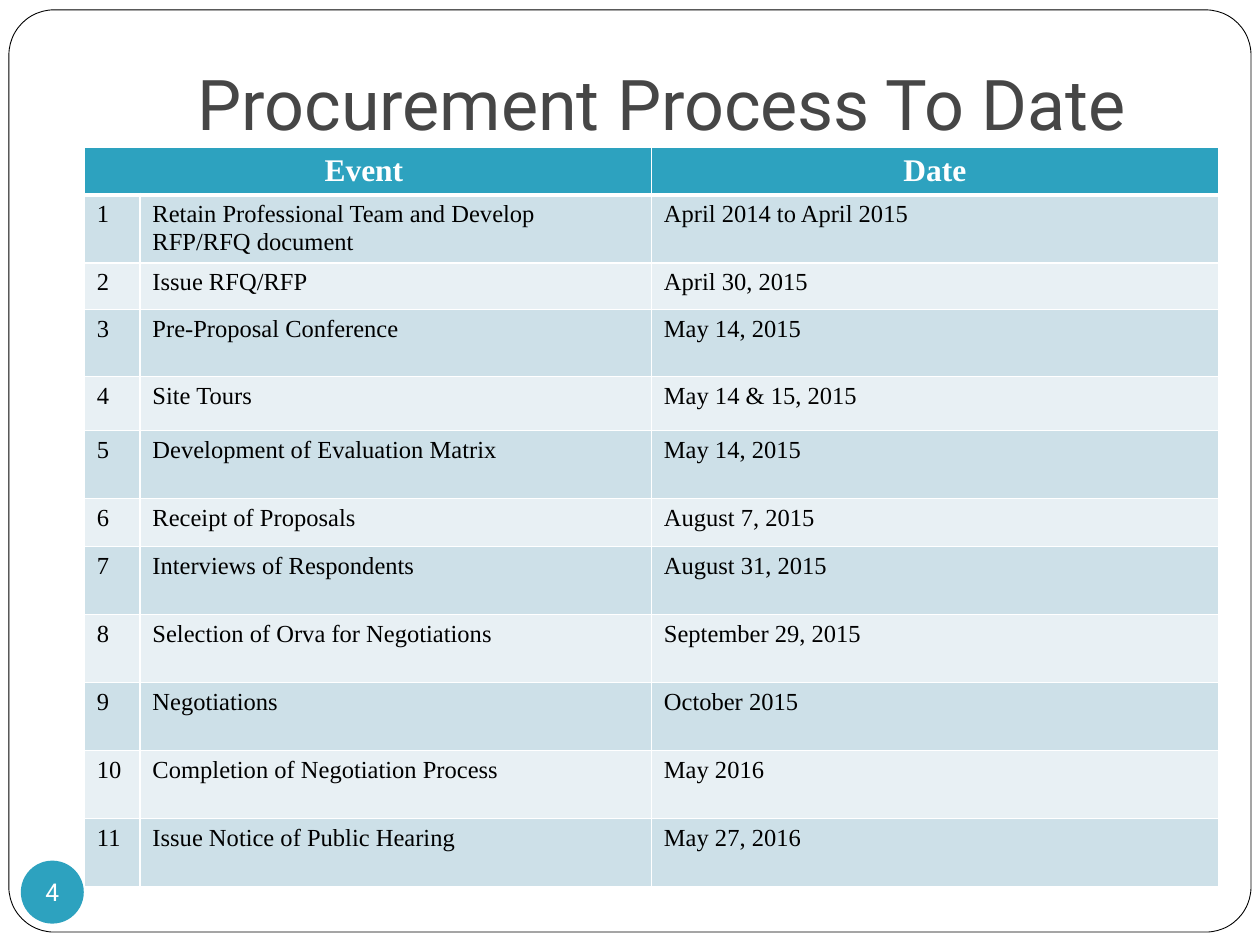
from lxml import etree
from pptx import Presentation
from pptx import util as u
from pptx.dml.color import RGBColor
from pptx.enum import shapes, text
from pptx.oxml import ns

TEAL, WHITE, BLACK, GREY = "2DA2BF", "FFFFFF", "000000", "464646"
BANDS = ["CDE0E8", "E8F0F4"]
SANS, SERIF = "Roboto", "Times New Roman"
WIDTHS = [1.12, 10.31, 11.43]
TALL = 1.37
HEIGHTS = [0.95, TALL, 0.94, 1.35, 1.09, TALL, 0.97] + [TALL] * 5
EVENTS = [
    ("Retain Professional Team and Develop RFP/RFQ document", "April 2014 to April 2015"),
    ("Issue RFQ/RFP", "April 30, 2015"),
    ("Pre-Proposal Conference", "May 14, 2015"),
    ("Site Tours", "May 14 & 15, 2015"),
    ("Development of Evaluation Matrix", "May 14, 2015"),
    ("Receipt of Proposals", "August 7, 2015"),
    ("Interviews of Respondents", "August 31, 2015"),
    ("Selection of Orva for Negotiations", "September 29, 2015"),
    ("Negotiations", "October 2015"),
    ("Completion of Negotiation Process", "May 2016"),
    ("Issue Notice of Public Hearing", "May 27, 2016"),
]


def paint(target, color):
    target.solid()
    target.fore_color.rgb = RGBColor.from_string(color)


def box(*sizes):
    return [u.Cm(size) for size in sizes]


def write(frame, words, size, font, color, bold=False, center=False):
    para = frame.paragraphs[0]
    para.alignment = text.PP_ALIGN.CENTER if center else text.PP_ALIGN.LEFT
    run = para.add_run()
    run.text = words
    run.font.size = u.Pt(size)
    run.font.name = font
    run.font.bold = bold
    paint(run.font.fill, color)


def inset(frame, left, top, right, bottom):
    frame.margin_left, frame.margin_top, frame.margin_right, frame.margin_bottom = box(
        left, top, right, bottom)


def add_frame(slide):
    frame = slide.shapes.add_shape(
        shapes.MSO_SHAPE.ROUNDED_RECTANGLE, *box(0.18, 0.2, 25.04, 18.59))
    frame.adjustments[0] = 0.049
    frame.shadow.inherit = False
    paint(frame.fill, WHITE)
    paint(frame.line.fill, BLACK)
    frame.line.width = u.Pt(0.5)
    slide.shapes._spTree.insert(2, frame._element)


def add_title(slide, words):
    title = slide.shapes.title
    title.left, title.top, title.width, title.height = box(2.54, 0.76, 21.59, 2.41)
    frame = title.text_frame
    frame.auto_size = text.MSO_AUTO_SIZE.NONE
    frame.vertical_anchor = text.MSO_ANCHOR.BOTTOM
    inset(frame, 0.25, 0.13, 0.25, 0.25)
    write(frame, words, 40, SANS, GREY, center=True)


def edge(cell, base):
    props = cell._tc.get_or_add_tcPr()
    for spot, side in enumerate("LRTB"):
        width = base if side == "B" else 1
        line = etree.Element(ns.qn(f"a:ln{side}"), w=str(u.Pt(width)))
        fill = etree.SubElement(line, ns.qn("a:solidFill"))
        etree.SubElement(fill, ns.qn("a:srgbClr"), val=WHITE)
        props.insert(spot, line)


def add_table(slide):
    rows = [("Event ", "", "Date")]
    rows += [(str(num), *event) for num, event in enumerate(EVENTS, 1)]
    grid = slide.shapes.add_table(
        len(rows), len(WIDTHS), *box(1.7, 2.97, sum(WIDTHS), sum(HEIGHTS))).table
    for column, width in zip(grid.columns, WIDTHS):
        column.width = u.Cm(width)
    for index, (row, height, words) in enumerate(zip(grid.rows, HEIGHTS, rows)):
        row.height = u.Cm(height)
        head = index == 0
        for cell, word in zip(row.cells, words):
            paint(cell.fill, TEAL if head else BANDS[(index - 1) % 2])
            edge(cell, 3 if head else 1)
            if word:
                write(cell.text_frame, word, 18 if head else 14, SERIF,
                      WHITE if head else BLACK, bold=head, center=head)
    grid.cell(0, 0).merge(grid.cell(0, 1))


def add_badge(slide, words):
    badge = slide.shapes.add_shape(
        shapes.MSO_SHAPE.OVAL, *box(0.42, 17.35, 1.27, 1.27))
    badge.shadow.inherit = False
    paint(badge.fill, TEAL)
    badge.line.fill.background()
    frame = badge.text_frame
    frame.word_wrap = False
    frame.vertical_anchor = text.MSO_ANCHOR.MIDDLE
    inset(frame, 0, 0, 0, 0)
    write(frame, words, 14, SANS, WHITE, center=True)


def main():
    deck = Presentation()
    deck.slide_width, deck.slide_height = box(25.4, 19.05)
    slide = deck.slides.add_slide(deck.slide_layouts[5])
    add_frame(slide)
    add_title(slide, "Procurement Process To Date")
    add_table(slide)
    add_badge(slide, "4")
    deck.save("out.pptx")


if __name__ == "__main__":
    main()
